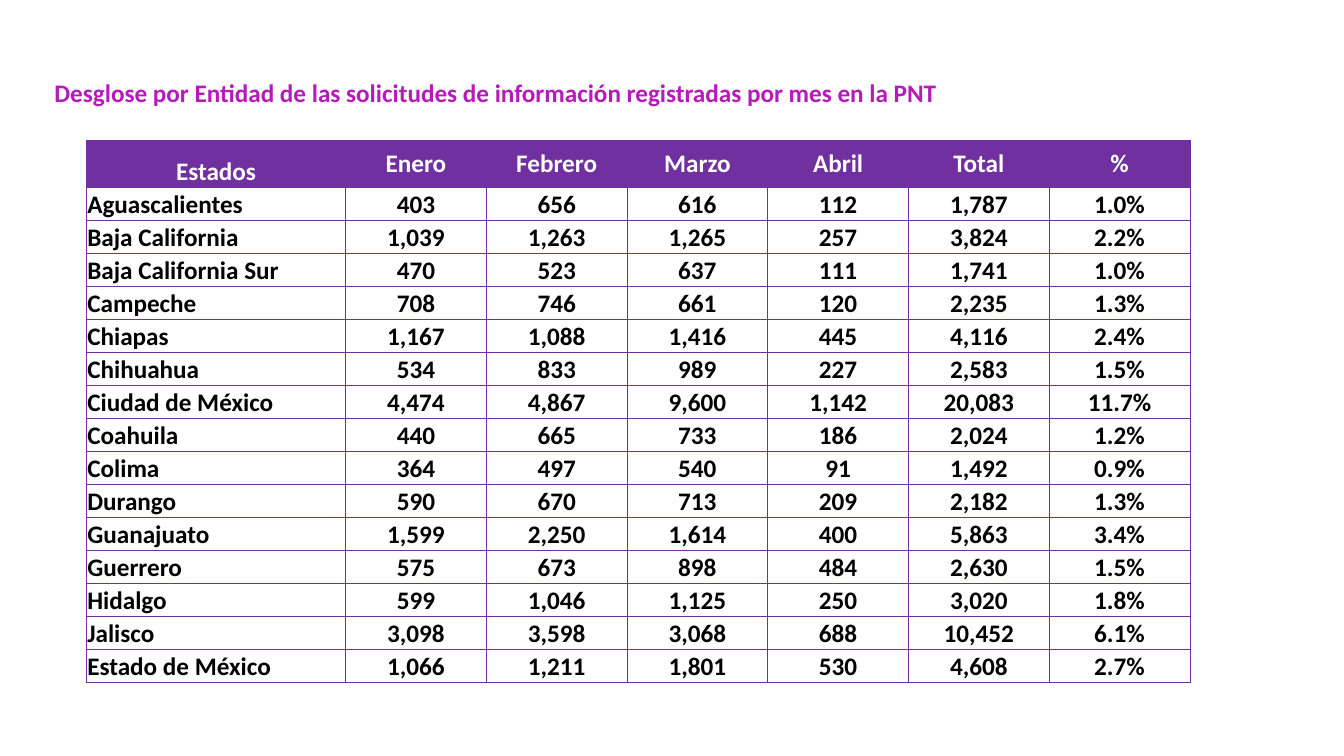
from lxml.etree import SubElement
from pptx import Presentation
from pptx.dml.color import RGBColor
from pptx.enum.text import MSO_ANCHOR as Anchor, PP_ALIGN as Align
from pptx.oxml.ns import qn
from pptx.util import Cm, Pt

HEADING = "Desglose por Entidad de las solicitudes de información registradas por mes en la PNT"
COLUMNS = ("Estados", "Enero", "Febrero", "Marzo", "Abril", "Total", "%")
STATES = [
    ("Aguascalientes", 403, 656, 616, 112, 1787, 1.0),
    ("Baja California", 1039, 1263, 1265, 257, 3824, 2.2),
    ("Baja California Sur", 470, 523, 637, 111, 1741, 1.0),
    ("Campeche", 708, 746, 661, 120, 2235, 1.3),
    ("Chiapas", 1167, 1088, 1416, 445, 4116, 2.4),
    ("Chihuahua", 534, 833, 989, 227, 2583, 1.5),
    ("Ciudad de México", 4474, 4867, 9600, 1142, 20083, 11.7),
    ("Coahuila", 440, 665, 733, 186, 2024, 1.2),
    ("Colima", 364, 497, 540, 91, 1492, 0.9),
    ("Durango", 590, 670, 713, 209, 2182, 1.3),
    ("Guanajuato", 1599, 2250, 1614, 400, 5863, 3.4),
    ("Guerrero", 575, 673, 898, 484, 2630, 1.5),
    ("Hidalgo", 599, 1046, 1125, 250, 3020, 1.8),
    ("Jalisco", 3098, 3598, 3068, 688, 10452, 6.1),
    ("Estado de México", 1066, 1211, 1801, 530, 4608, 2.7),
]

PURPLE = RGBColor(0x70, 0x30, 0xA0)
MAGENTA = RGBColor(0xB6, 0x1A, 0xBA)
WHITE = RGBColor(0xFF, 0xFF, 0xFF)
BLACK = RGBColor(0, 0, 0)

FONT = {"name": "Calibri", "size": Pt(18), "bold": True}
CELL = {"margin_left": Cm(0.02), "margin_right": Cm(0.02),
        "margin_top": Cm(0.02), "margin_bottom": 0}
PLAIN = {"first_row": False, "horz_banding": False}

TABLE_WIDTH, TABLE_HEIGHT = Cm(27.81), Cm(13.66)
STATE_WIDTH, HEADER_HEIGHT = Cm(6.53), Cm(1.17)
FIGURE_WIDTH = (TABLE_WIDTH - STATE_WIDTH) // (len(COLUMNS) - 1)
STATE_HEIGHT = (TABLE_HEIGHT - HEADER_HEIGHT) // len(STATES)


def apply(target, values):
    for name, value in values.items():
        setattr(target, name, value)


def write(paragraph, words, color, align):
    paragraph.alignment = align
    run = paragraph.add_run()
    run.text = words
    apply(run.font, FONT)
    run.font.color.rgb = color


def outline(cell):
    properties = cell._tc.get_or_add_tcPr()
    for position, side in enumerate(("a:lnL", "a:lnR", "a:lnT", "a:lnB")):
        line = SubElement(properties, qn(side), w=str(Pt(0.5)))
        fill = SubElement(line, qn("a:solidFill"))
        SubElement(fill, qn("a:srgbClr"), val=str(PURPLE))
        properties.insert(position, line)


def display(state):
    name, *counts, share = state
    return (name, *(f"{count:,}" for count in counts), f"{share:.1f}%")


def main():
    deck = Presentation()
    deck.slide_width, deck.slide_height = Cm(33.87), Cm(19.05)
    slide = deck.slides.add_slide(deck.slide_layouts[6])

    rows = [COLUMNS, *map(display, STATES)]
    requests = slide.shapes.add_table(
        len(rows), len(COLUMNS), Cm(2.18), Cm(3.54), TABLE_WIDTH, TABLE_HEIGHT).table
    apply(requests, PLAIN)
    for c, column in enumerate(requests.columns):
        column.width = FIGURE_WIDTH if c else STATE_WIDTH
    for r, values in enumerate(rows):
        requests.rows[r].height = STATE_HEIGHT if r else HEADER_HEIGHT
        for c, value in enumerate(values):
            cell = requests.cell(r, c)
            apply(cell, CELL)
            cell.vertical_anchor = Anchor.MIDDLE if r == 0 and c else Anchor.BOTTOM
            if r:
                cell.fill.background()
            else:
                cell.fill.solid()
                cell.fill.fore_color.rgb = PURPLE
            outline(cell)
            write(cell.text_frame.paragraphs[0], value, BLACK if r else WHITE,
                  Align.LEFT if r and c == 0 else Align.CENTER)

    heading = slide.shapes.add_textbox(Cm(1.12), Cm(1.83), Cm(32.61), Cm(1.03)).text_frame
    heading.word_wrap = True
    write(heading.paragraphs[0], HEADING, MAGENTA, Align.JUSTIFY)

    deck.save("out.pptx")


if __name__ == "__main__":
    main()
